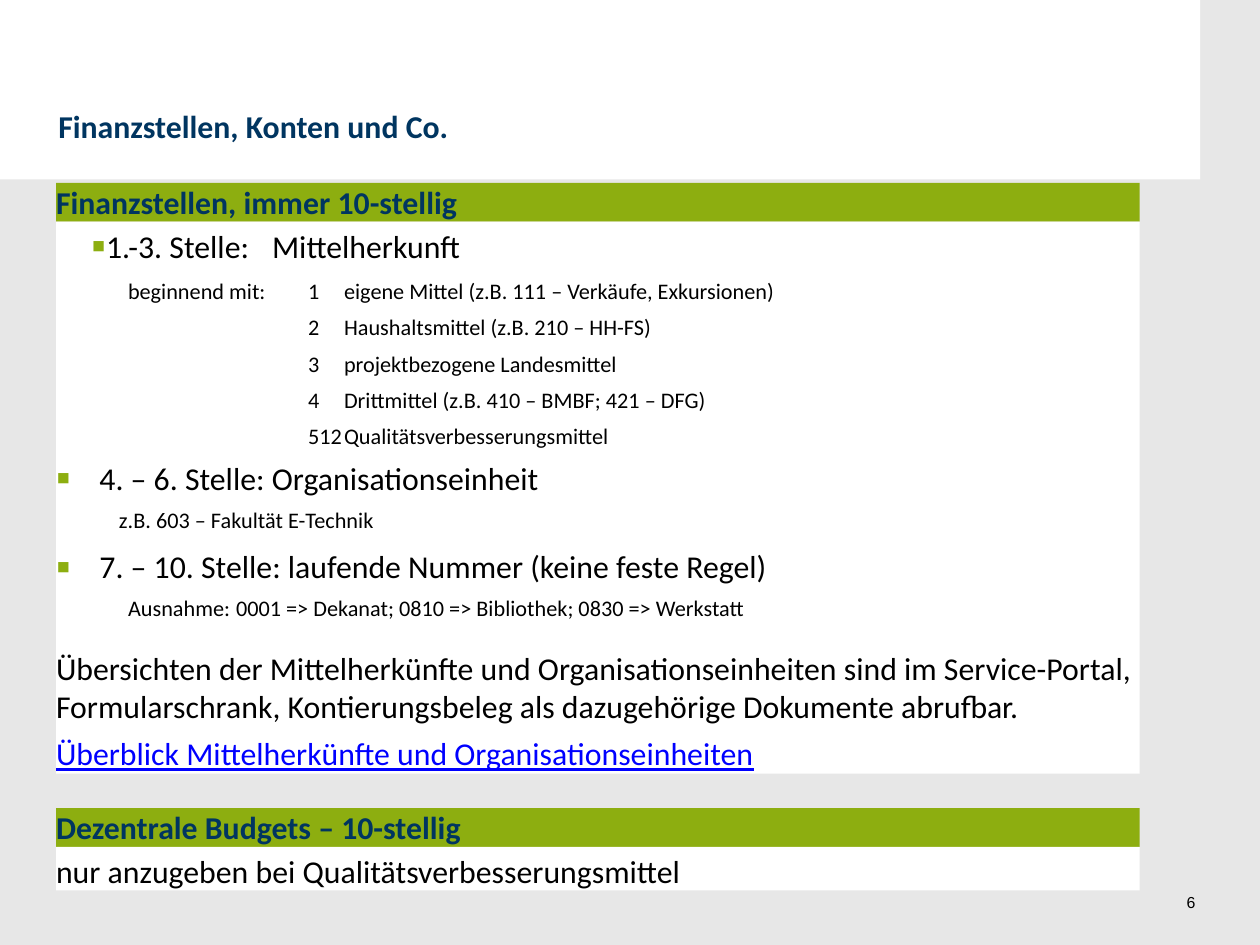
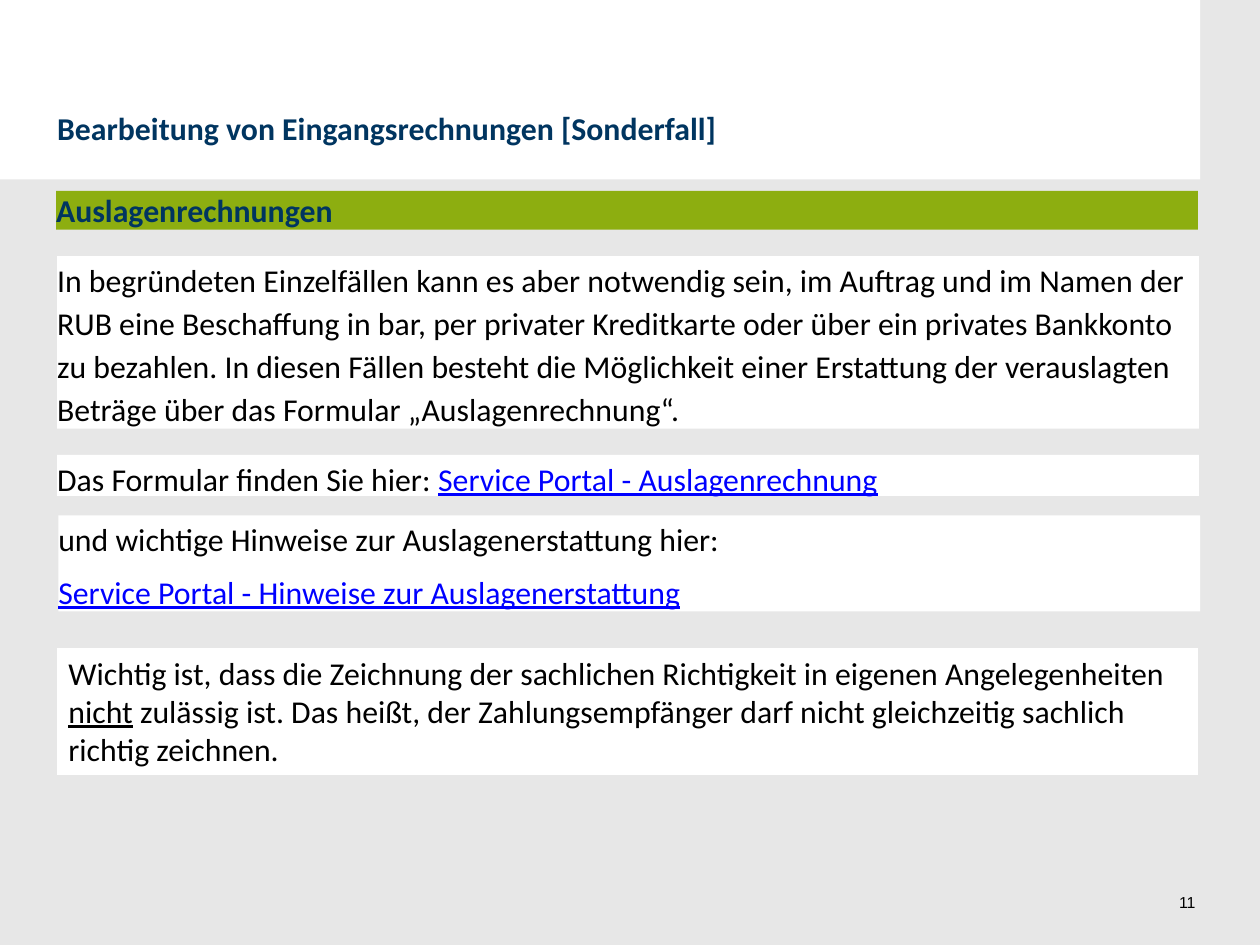
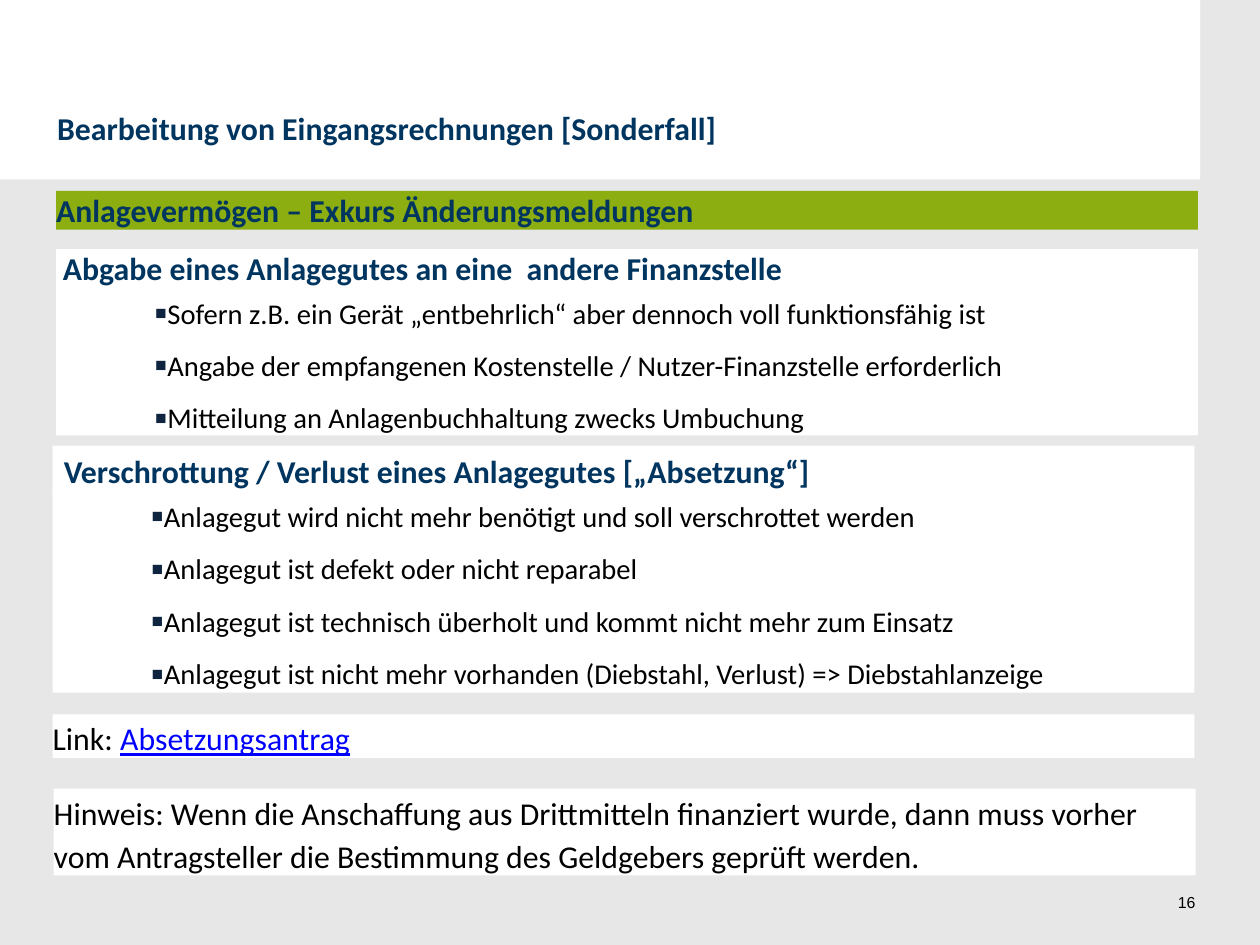
from dataclasses import dataclass

from lxml import etree
from pptx import Presentation
from pptx.dml.color import RGBColor
from pptx.enum.shapes import MSO_SHAPE
from pptx.enum.text import MSO_ANCHOR, MSO_AUTO_SIZE, PP_ALIGN
from pptx.oxml.ns import qn
from pptx.util import Cm, Inches, Pt

RECTANGLE = MSO_SHAPE.RECTANGLE
TOP = MSO_ANCHOR.TOP
LEFT, RIGHT = PP_ALIGN.LEFT, PP_ALIGN.RIGHT
NO_FIT = MSO_AUTO_SIZE.NONE
TITLE_ONLY = 5
PAGE_WIDTH, PAGE_HEIGHT = Cm(28), Cm(21)
TAB_STEP = Cm(0.8)


@dataclass(frozen=True)
class Theme:
    page: str = "E7E7E7"
    panel: str = "FFFFFF"
    green: str = "8DAE10"
    navy: str = "003560"
    dark: str = "0F243E"
    black: str = "000000"
    link: str = "0000FF"
    text_font: str = "Calibri"
    number_font: str = "Arial"
    large: int = 20
    medium: int = 18
    small: int = 14
    tiny: int = 10
    line: int = 27
    after: int = 6


THEME = Theme()
FLUSH = (0, 0)
PADDED = (0.1, 0.05)

HEADING = {"size": THEME.large, "color": THEME.navy, "bold": True}
PLAIN = {"size": THEME.large, "after": THEME.after}
BODY = {**PLAIN, "line": THEME.line}
NOTE = {"size": THEME.small, "after": THEME.after}
GREEN_POINT = {**PLAIN, "bullet": THEME.green, "margin": 0.38, "indent": -0.38}
STYLES = {
    "heading": HEADING,
    "plain": PLAIN,
    "body": BODY,
    "overview": {**PLAIN, "before": 11},
    "important": {"size": THEME.large},
    "origin": {**BODY, "bullet": THEME.green, "indent": 0.31, "tabs": [1.89]},
    "first code": {**NOTE, "before": 2},
    "note": NOTE,
    "unit": GREEN_POINT,
    "number": {**GREEN_POINT, "line": THEME.line},
    "example": {**NOTE, "margin": 0.55},
    "step": {**BODY, "size": THEME.medium, "bullet": THEME.dark,
             "margin": 0.55, "indent": 0.31},
    "page number": {"size": THEME.tiny, "font": THEME.number_font, "align": RIGHT},
}
RUN_STYLES = {
    "link": {"color": THEME.link, "underline": True},
    "stressed": {"underline": True},
}


def lines(style, *texts):
    return [(style, [text]) for text in texts]


SPECIAL_CASE = ("Bearbeitung von Eingangsrechnungen [Sonderfall]", (0.5, 0.95, 8.92, 0.34))
SLIDES = [
    {
        "title": ("Finanzstellen, Konten und Co.", (0.51, 0.93, 7.45, 0.34)),
        "number": "6",
        "boxes": [
            (THEME.green, (0.49, 1.6, 9.48, 0.34), FLUSH,
             lines("heading", "Finanzstellen, immer 10-stellig")),
            (THEME.panel, (0.49, 1.94, 9.48, 4.83), FLUSH, [
                ("origin", ["1.-3. Stelle:\tMittelherkunft"]),
                ("first code", ["\t\tbeginnend mit:\t\t1 \teigene Mittel (z.B. 111 – Verkäufe, Exkursionen)"]),
                *lines("note",
                       "\t\t\t\t\t\t\t2\tHaushaltsmittel (z.B. 210 – HH-FS)",
                       "\t\t\t\t\t\t\t3 \tprojektbezogene Landesmittel",
                       "\t\t\t\t\t\t\t4 \tDrittmittel (z.B. 410 – BMBF; 421 – DFG)",
                       "\t\t\t\t\t\t\t512\tQualitätsverbesserungsmittel"),
                ("unit", ["4. – 6. Stelle: Organisationseinheit"]),
                ("example", ["z.B. 603 – Fakultät E-Technik"]),
                ("number", ["7. – 10. Stelle: laufende Nummer (keine feste Regel)"]),
                ("note", ["\t\tAusnahme:\t0001 => Dekanat; 0810 => Bibliothek; 0830 => Werkstatt"]),
                ("overview", ["Übersichten der Mittelherkünfte und Organisationseinheiten sind im "
                              "Service-Portal, Formularschrank, Kontierungsbeleg als dazugehörige "
                              "Dokumente abrufbar."]),
                ("plain", [("Überblick Mittelherkünfte und Organisationseinheiten", "link")]),
            ]),
            (THEME.green, (0.49, 7.07, 9.48, 0.34), FLUSH,
             lines("heading", "Dezentrale Budgets – 10-stellig")),
            (THEME.panel, (0.49, 7.41, 9.48, 0.38), FLUSH,
             lines("body", "nur anzugeben bei Qualitätsverbesserungsmittel")),
        ],
    },
    {
        "title": SPECIAL_CASE,
        "number": "11",
        "boxes": [
            (THEME.green, (0.49, 1.67, 9.99, 0.34), FLUSH,
             lines("heading", "Auslagenrechnungen")),
            (THEME.panel, (0.5, 2.24, 9.99, 1.51), FLUSH,
             lines("body", "In begründeten Einzelfällen kann es aber notwendig sein, im Auftrag und im "
                           "Namen der RUB eine Beschaffung in bar, per privater Kreditkarte oder über "
                           "ein privates Bankkonto zu bezahlen. In diesen Fällen besteht die "
                           "Möglichkeit einer Erstattung der verauslagten Beträge über das Formular "
                           "„Auslagenrechnung“.")),
            (THEME.panel, (0.5, 3.98, 9.99, 0.36), FLUSH,
             [("body", ["Das Formular finden Sie hier: ",
                        ("Service Portal - Auslagenrechnung", "link")])]),
            (THEME.panel, (0.51, 4.51, 9.99, 0.84), FLUSH, [
                ("body", ["und wichtige Hinweise zur Auslagenerstattung hier:"]),
                ("body", [("Service Portal - Hinweise zur Auslagenerstattung", "link")]),
            ]),
            (THEME.panel, (0.5, 5.67, 9.98, 1.11), PADDED,
             [("important", ["Wichtig ist, dass die Zeichnung der sachlichen Richtigkeit in eigenen "
                             "Angelegenheiten ", ("nicht", "stressed"),
                             " zulässig ist. Das heißt, der Zahlungsempfänger darf nicht "
                             "gleichzeitig sachlich richtig zeichnen."])]),
        ],
    },
    {
        "title": SPECIAL_CASE,
        "number": "16",
        "boxes": [
            (THEME.green, (0.49, 1.67, 9.99, 0.34), FLUSH,
             lines("heading", "Anlagevermögen – Exkurs Änderungsmeldungen")),
            (THEME.panel, (0.49, 2.18, 9.99, 0.34), (0.06, 0),
             lines("heading", "Abgabe eines Anlagegutes an eine  andere Finanzstelle")),
            (THEME.panel, (0.49, 2.51, 9.99, 1.3), FLUSH,
             lines("step",
                   "Sofern z.B. ein Gerät „entbehrlich“ aber dennoch voll funktionsfähig ist",
                   "Angabe der empfangenen Kostenstelle / Nutzer-Finanzstelle erforderlich",
                   "Mitteilung an Anlagenbuchhaltung zwecks Umbuchung")),
            (THEME.panel, (0.46, 3.9, 9.99, 0.44), PADDED,
             lines("heading", "Verschrottung / Verlust eines Anlagegutes [„Absetzung“]")),
            (THEME.panel, (0.46, 4.29, 9.99, 1.77), FLUSH,
             lines("step",
                   "Anlagegut wird nicht mehr benötigt und soll verschrottet werden",
                   "Anlagegut ist defekt oder nicht reparabel",
                   "Anlagegut ist technisch überholt und kommt nicht mehr zum Einsatz",
                   "Anlagegut ist nicht mehr vorhanden (Diebstahl, Verlust) => Diebstahlanzeige")),
            (THEME.panel, (0.46, 6.25, 9.99, 0.38), FLUSH,
             [("body", ["Link: ", ("Absetzungsantrag", "link")])]),
            (THEME.panel, (0.47, 6.9, 9.99, 0.76), FLUSH,
             lines("body", "Hinweis: Wenn die Anschaffung aus Drittmitteln finanziert wurde, dann muss "
                           "vorher vom Antragsteller die Bestimmung des Geldgebers geprüft werden.")),
        ],
    },
]


def add_marks(properties, style):
    if "bullet" in style:
        color = etree.SubElement(properties, qn("a:buClr"))
        etree.SubElement(color, qn("a:srgbClr"), val=style["bullet"])
        etree.SubElement(properties, qn("a:buSzPct"), val="130000")
        etree.SubElement(properties, qn("a:buFont"), typeface=THEME.number_font)
        etree.SubElement(properties, qn("a:buChar"), char="▪")
    if "tabs" in style:
        stops = etree.SubElement(properties, qn("a:tabLst"))
        for stop in style["tabs"]:
            etree.SubElement(stops, qn("a:tab"), pos=str(Inches(stop)), algn="l")


def format_paragraph(paragraph, style):
    properties = paragraph._p.get_or_add_pPr()
    distances = {
        "marL": Inches(style.get("margin", 0)),
        "indent": Inches(style.get("indent", 0)),
        "defTabSz": TAB_STEP,
    }
    for attribute, distance in distances.items():
        properties.set(attribute, str(int(distance)))
    add_marks(properties, style)
    formats = {
        "alignment": style.get("align", LEFT),
        "space_before": Pt(style.get("before", 0)),
        "space_after": Pt(style.get("after", 0)),
    }
    if "line" in style:
        formats["line_spacing"] = Pt(style["line"])
    for attribute, value in formats.items():
        setattr(paragraph, attribute, value)


def add_run(paragraph, text, style):
    run = paragraph.add_run()
    run.text = text
    formats = {
        "name": style.get("font", THEME.text_font),
        "size": Pt(style["size"]),
        "bold": style.get("bold", False),
        "underline": style.get("underline", False),
    }
    for attribute, value in formats.items():
        setattr(run.font, attribute, value)
    run.font.color.rgb = RGBColor.from_string(style.get("color", THEME.black))


def write(frame, paragraphs, inset=FLUSH):
    across, down = (Inches(length) for length in inset)
    formats = {
        "word_wrap": True, "auto_size": NO_FIT, "vertical_anchor": TOP,
        "margin_left": across, "margin_right": across,
        "margin_top": down, "margin_bottom": down,
    }
    for attribute, value in formats.items():
        setattr(frame, attribute, value)
    for index, (style_name, runs) in enumerate(paragraphs):
        paragraph = frame.add_paragraph() if index else frame.paragraphs[0]
        style = STYLES[style_name]
        format_paragraph(paragraph, style)
        for run in runs:
            text, emphasis = (run, None) if isinstance(run, str) else run
            add_run(paragraph, text, {**style, **RUN_STYLES.get(emphasis, {})})


def add_panel(slide, place, color):
    panel = slide.shapes.add_shape(RECTANGLE, *map(Inches, place))
    panel.shadow.inherit = False
    panel.fill.solid()
    panel.fill.fore_color.rgb = RGBColor.from_string(color)
    panel.line.fill.background()
    return panel


def dress_layout(layout, slide):
    background = layout.background.fill
    background.solid()
    background.fore_color.rgb = RGBColor.from_string(THEME.page)
    header = add_panel(slide, (0, 0, 10.5, 1.57), THEME.panel)
    layout.shapes._spTree.insert(2, header._element)


def fill_slide(slide, content):
    text, place = content["title"]
    title = slide.shapes.title
    for attribute, length in zip(("left", "top", "width", "height"), place):
        setattr(title, attribute, Inches(length))
    write(title.text_frame, lines("heading", text))
    for color, place, inset, paragraphs in content["boxes"]:
        write(add_panel(slide, place, color).text_frame, paragraphs, inset)
    number = slide.shapes.add_textbox(*map(Inches, (10.06, 7.81, 0.4, 0.17)))
    write(number.text_frame, lines("page number", content["number"]))


def main():
    deck = Presentation()
    deck.slide_width, deck.slide_height = PAGE_WIDTH, PAGE_HEIGHT
    layout = deck.slide_layouts[TITLE_ONLY]
    slides = [deck.slides.add_slide(layout) for _ in SLIDES]
    dress_layout(layout, slides[0])
    for slide, content in zip(slides, SLIDES):
        fill_slide(slide, content)
    deck.save("out.pptx")


if __name__ == "__main__":
    main()
